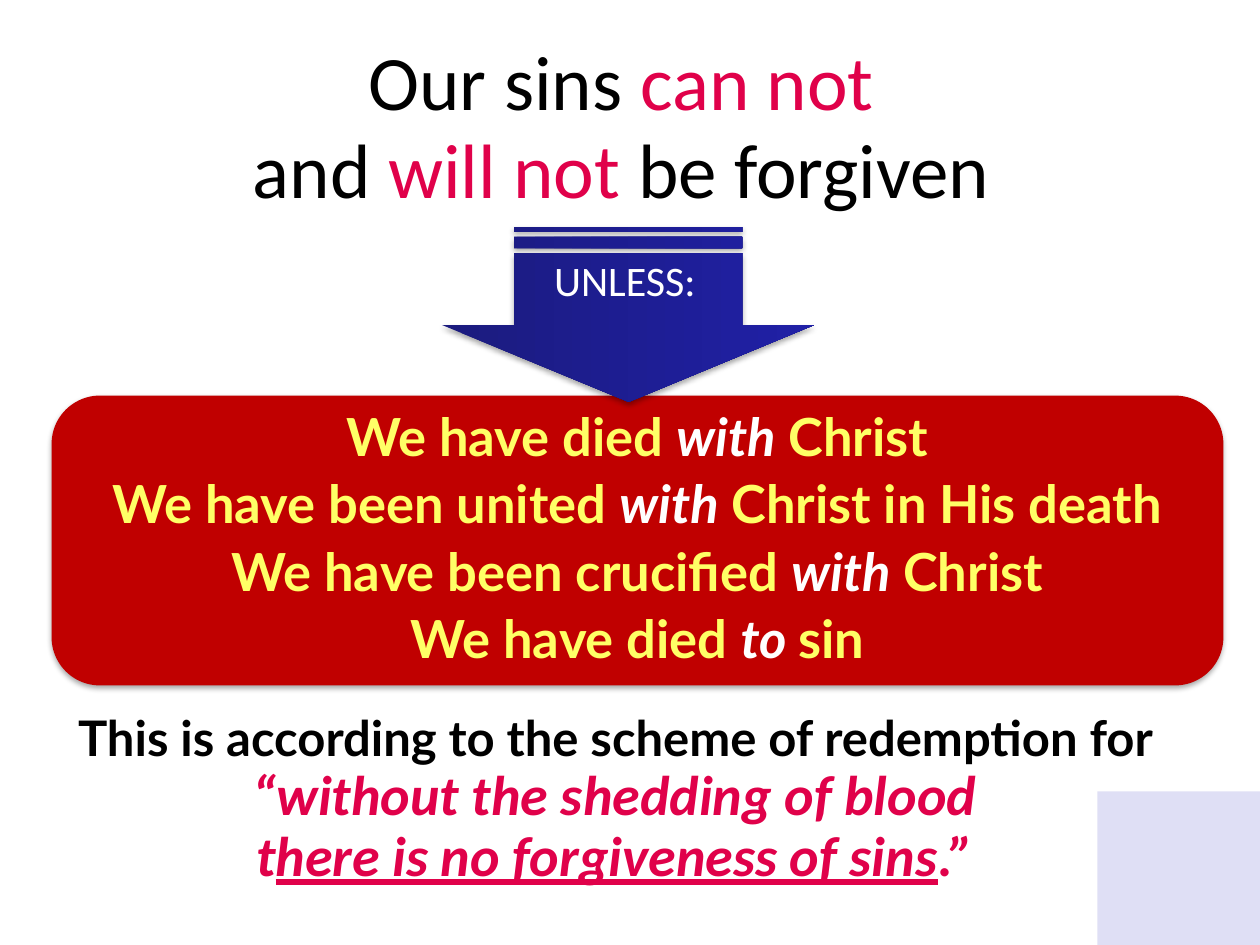
"""Build the slide on how sins are forgiven."""
from dataclasses import dataclass, field
from typing import Any

from lxml.etree import SubElement as Sub
from pptx import Presentation
from pptx.dml.color import RGBColor
from pptx.enum.shapes import MSO_SHAPE as Kind
from pptx.enum.text import MSO_ANCHOR as Anchor, PP_ALIGN as Align
from pptx.oxml.ns import qn
from pptx.util import Inches, Pt

BLACK = RGBColor(0x00, 0x00, 0x00)
WHITE = RGBColor(0xFF, 0xFF, 0xFF)
PINK = RGBColor(0xE0, 0x01, 0x4A)
RED = RGBColor(0xC0, 0x00, 0x00)
YELLOW = RGBColor(0xFF, 0xFF, 0x66)
NAVY = RGBColor(0x1B, 0x1B, 0x7E)
BLUE = RGBColor(0x20, 0x20, 0xA6)
PALE = RGBColor(0xDF, 0xDF, 0xF5)

PLAIN = {"name": "Calibri", "size": Pt(44), "color": BLACK}
STRONG = {"name": "Lato", "size": Pt(28), "color": BLACK, "bold": True}
QUOTE = {"name": "Calibri", "size": Pt(32), "color": PINK, "bold": True, "italic": True}
CLAIM = {"name": "Lato", "size": Pt(30), "color": YELLOW, "bold": True}
HOT = PLAIN | {"color": PINK}
KEY = CLAIM | {"color": WHITE, "italic": True}
LABEL = PLAIN | {"size": Pt(24), "color": WHITE}


@dataclass
class Run:
    """A piece of text with its format; a newline text is a line break."""
    text: str
    style: dict[str, Any]


@dataclass
class Block:
    """Text of a box: paragraphs of runs, with spacing and frame values."""
    paras: list[list[Run]]
    line: float = 1.0
    gap: float = 0
    frame: dict[str, Any] = field(default_factory=dict)


def claim(start: str, key: str, end: str) -> list[Run]:
    """Make one claim with a stressed word."""
    return [Run(start, CLAIM), Run(key, KEY), Run(end, CLAIM)]


TITLE = Block(
    [[Run("Our sins ", PLAIN), Run("can not ", HOT), Run("\n", HOT), Run("and ", PLAIN),
      Run("will not ", HOT), Run("be forgiven ", PLAIN)]],
    line=0.95,
    frame={"vertical_anchor": Anchor.MIDDLE, "margin_left": 0, "margin_right": 0,
           "margin_top": 0, "margin_bottom": 0})
CLAIMS = Block(
    [claim("We have died ", "with", " Christ"),
     claim("We have been united ", "with", " Christ in His death"),
     claim("We have been crucified ", "with", " Christ"),
     claim("We have died ", "to ", "sin")],
    line=0.9, gap=6, frame={"vertical_anchor": Anchor.MIDDLE, "word_wrap": False})
VERSE = Block(
    [[Run("This is according to the scheme of redemption for ", STRONG),
      Run("“without the shedding of blood", QUOTE)],
     [Run("t", QUOTE), Run("here is no forgiveness of sins", QUOTE | {"underline": True}),
      Run(".”", QUOTE)]],
    line=0.9)
UNLESS = Block([[Run("UNLESS:", LABEL)]])

LEFT, RIGHT = 4.08, 5.89
HEAD = [(6.46, 2.58), (RIGHT, 2.58), (RIGHT, 2.01), (LEFT, 2.01),
        (LEFT, 2.58), (3.51, 2.58), (4.99, 3.19)]
BARS = [(1.88, 1.97), (1.8, 1.84)]


def write(frame: Any, block: Block) -> None:
    """Fill a text frame with a block."""
    for name, value in ({"word_wrap": True} | block.frame).items():
        setattr(frame, name, value)
    for spot, runs in enumerate(block.paras):
        para = frame.add_paragraph() if spot else frame.paragraphs[0]
        para.alignment, para.line_spacing = Align.CENTER, block.line
        para.space_before = Pt(block.gap if spot else 0)
        for item in runs:
            if item.text == "\n":
                para.add_line_break()
                continue
            run = para.add_run()
            run.text = item.text
            for name, value in item.style.items():
                if name == "color":
                    run.font.color.rgb = value
                else:
                    setattr(run.font, name, value)


def add_text(slide: Any, box: tuple[float, ...], block: Block) -> None:
    """Add a text box."""
    write(slide.shapes.add_textbox(*map(Inches, box)).text_frame, block)


def add_panel(slide: Any, kind: Kind, box: tuple[float, ...], color: RGBColor) -> Any:
    """Add a flat shape with no line."""
    shape = slide.shapes.add_shape(kind, *map(Inches, box))
    shape.shadow.inherit = False
    shape.fill.solid()
    shape.fill.fore_color.rgb = color
    shape.line.fill.background()
    return shape


def add_shade(shape: Any) -> None:
    """Give a shape a soft shadow below."""
    shape.shadow.inherit = False
    effects = shape._element.spPr.find(qn("a:effectLst"))
    outer = Sub(effects, qn("a:outerShdw"), blurRad=str(Pt(3.1)), dist=str(Pt(1.8)),
                dir="5400000", rotWithShape="0")
    tint = Sub(outer, qn("a:srgbClr"), val=str(BLACK))
    Sub(tint, qn("a:alpha"), val="35000")


def add_arrow(slide: Any) -> None:
    """Add the striped arrow that points down."""
    bars = [[(RIGHT, top), (LEFT, top), (LEFT, low), (RIGHT, low)] for top, low in BARS]
    head, *rest = [[(Inches(x), Inches(y)) for x, y in part] for part in (HEAD, *bars)]
    pen = slide.shapes.build_freeform(*head[0])
    pen.add_line_segments(head[1:], close=True)
    for bar in rest:
        pen.move_to(*bar[0])
        pen.add_line_segments(bar[1:], close=True)
    arrow = pen.convert_to_shape()
    arrow.fill.gradient()
    arrow.fill.gradient_angle = 0
    for stop, color in zip(arrow.fill.gradient_stops, (NAVY, BLUE)):
        stop.color.rgb = color
    arrow.line.fill.background()
    add_shade(arrow)


def main() -> None:
    """Draw the slide and save it."""
    deck = Presentation()
    deck.slide_width, deck.slide_height = Inches(10), Inches(7.5)
    slide = deck.slides.add_slide(deck.slide_layouts[6])
    add_text(slide, (0.38, 5.62, 9, 1.62), VERSE)
    panel = add_panel(slide, Kind.ROUNDED_RECTANGLE, (0.41, 3.14, 9.3, 2.3), RED)
    add_shade(panel)
    write(panel.text_frame, CLAIMS)
    add_text(slide, (0, 0.39, 10, 1.25), TITLE)
    add_arrow(slide)
    add_text(slide, (4.09, 1.97, 1.74, 0.5), UNLESS)
    add_panel(slide, Kind.RECTANGLE, (8.71, 6.28, 1.29, 1.22), PALE)
    deck.save("out.pptx")


if __name__ == "__main__":
    main()
